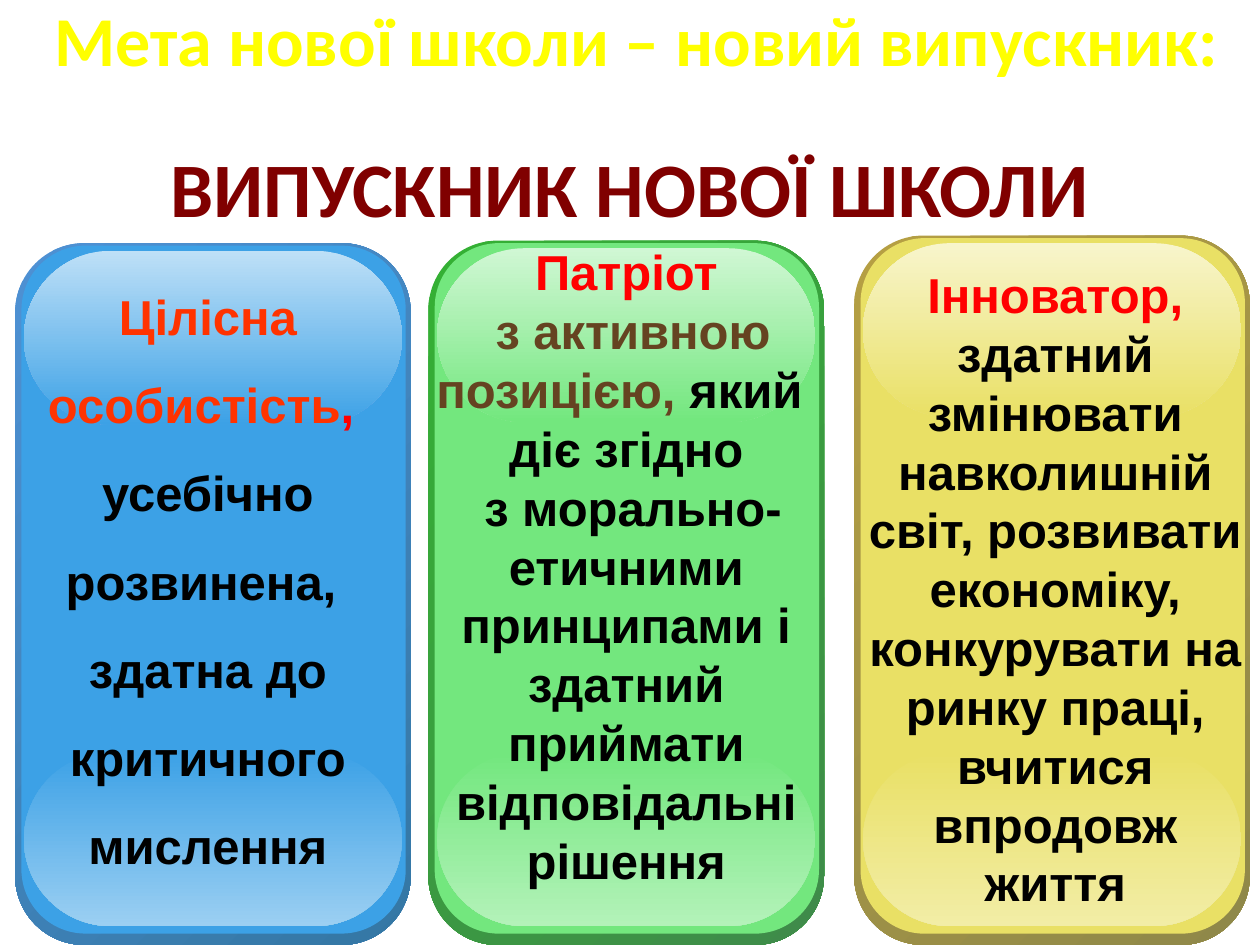
import pptx
import pptx.util
import pptx.dml.color
import pptx.enum.shapes
import pptx.enum.text
import pptx.oxml

Inches = pptx.util.Inches
ROUNDED = pptx.enum.shapes.MSO_SHAPE.ROUNDED_RECTANGLE
CENTER = pptx.enum.text.PP_ALIGN.CENTER

COLORS = {
    "heading": "800000", "headline": "FFFF00", "red": "FF0000",
    "orange": "FF3300", "brown": "654321", "black": "000000",
    "blue": "3CA1E6", "green": "73E77E", "yellow": "E9E065",
}
HEADING = {"size": pptx.util.Pt(44), "name": "Calibri", "bold": True}
HEADLINE = {"size": pptx.util.Pt(40), "name": "Calibri", "bold": True}
TRAIT = {"size": pptx.util.Pt(28), "name": "Arial", "bold": True}

SLIDE_W, SLIDE_H = 10, 7.5
CARD_W = 3.14

# Each card: box left and top, colours, text box, line spacing, paragraphs of (text, colour)
CARDS = [
    {"left": 0.12, "top": 1.93, "face": "blue", "rim": ("4E91D4", "3477A4"),
     "glow": "BEE0F7", "foot": "9BCFF2",
     "text_box": (-0.12, 0.06, 3.3, 5.05), "spacing": 1.5,
     "traits": [
         [("Цілісна особистість", "orange"), (", ", "red")],
         [("усебічно розвинена, ", "black")],
         [("здатна до критичного мислення", "black")]]},
    {"left": 3.4, "top": 1.91, "face": "green", "rim": ("34B034", "3F8B4A"),
     "glow": "D0F7D4", "foot": "B3F2B9",
     "text_box": (-0.17, -0.04, 3.48, 5.28), "spacing": 1.0,
     "traits": [
         [("Патріот", "red")],
         [(" з активною позицією, ", "brown"), ("який ", "black")],
         [("діє згідно", "black")],
         [(" з морально-етичними принципами і здатний приймати "
           "відповідальні рішення", "black")]]},
    {"left": 6.78, "top": 1.87, "face": "yellow", "rim": ("B59F43", "8F8849"),
     "glow": "F8F5CC", "foot": "F2EDA6",
     "text_box": (-0.03, 0.18, 3.25, 5.28), "spacing": 1.0,
     "traits": [
         [("Інноватор, ", "red"),
          ("здатний змінювати навколишній світ, розвивати економіку, "
           "конкурувати на ринку праці, вчитися впродовж життя", "black")]]},
]


def rgb(hex_color):
    return pptx.dml.color.RGBColor.from_string(hex_color)


def add_run(paragraph, text, color, font_format):
    run = paragraph.add_run()
    run.text = text
    run.font.color.rgb = rgb(COLORS[color])
    for attribute, value in font_format.items():
        setattr(run.font, attribute, value)


def add_panel(slide, box, rounding, colors, angle=0):
    """Rounded panel, solid for one colour and graded for two."""
    panel = slide.shapes.add_shape(ROUNDED, *map(Inches, box))
    panel.adjustments[0] = rounding
    panel.shadow.inherit = False
    panel.line.fill.background()
    if len(colors) == 1:
        panel.fill.solid()
        panel.fill.fore_color.rgb = rgb(colors[0])
        return
    panel.fill.gradient()
    panel.fill.gradient_angle = angle
    for stop, position, color in zip(panel.fill.gradient_stops, (0, 1), colors):
        stop.position = position
        stop.color.rgb = rgb(color)


def add_card(slide, card):
    left, top = card["left"], card["top"]
    height = SLIDE_H - top
    face = COLORS[card["face"]]
    gloss_left, gloss_w, gloss_h = left + 0.07, CARD_W - 0.14, 1.38

    # Rim, face, and the glossy ends
    add_panel(slide, (left, top, CARD_W, height), 0.175, card["rim"], 315)
    add_panel(slide, (left + 0.05, top + 0.02, CARD_W - 0.09, height - 0.11),
              0.167, (face,))
    add_panel(slide, (gloss_left, SLIDE_H - 0.15 - gloss_h, gloss_w, gloss_h),
              0.5, (face, card["foot"]), 270)
    add_panel(slide, (gloss_left, top + 0.06, gloss_w, gloss_h),
              0.5, (card["glow"], face), 270)

    # Trait text
    dx, dy, width, text_h = card["text_box"]
    frame = slide.shapes.add_textbox(
        *map(Inches, (left + dx, top + dy, width, text_h))).text_frame
    frame.word_wrap = True
    for index, runs in enumerate(card["traits"]):
        paragraph = frame.add_paragraph() if index else frame.paragraphs[0]
        paragraph.alignment = CENTER
        paragraph.line_spacing = card["spacing"]
        for text, color in runs:
            add_run(paragraph, text, color, TRAIT)


def fill_placeholder(placeholder, box, text, color, font_format):
    for attribute, value in zip(("left", "top", "width", "height"), box):
        setattr(placeholder, attribute, Inches(value))
    paragraph = placeholder.text_frame.paragraphs[0]
    paragraph.alignment = CENTER
    add_run(paragraph, text, color, font_format)
    return paragraph


def add_headings(slide):
    fill_placeholder(slide.shapes.title, (0, 1.05, SLIDE_W, 0.87),
                     "ВИПУСКНИК НОВОЇ ШКОЛИ", "heading", HEADING)
    headline = fill_placeholder(
        slide.placeholders[1], (0.17, 0, 9.76, 1.1),
        "Мета нової школи – новий випускник:", "headline", HEADLINE)
    headline.line_spacing = 0.9
    # The headline carries no bullet
    headline._p.get_or_add_pPr().append(
        pptx.oxml.parse_xml(
            '<a:buNone xmlns:a="http://schemas.openxmlformats.org/drawingml/2006/main"/>'))


def main():
    presentation = pptx.Presentation()
    presentation.slide_width = Inches(SLIDE_W)
    presentation.slide_height = Inches(SLIDE_H)
    slide = presentation.slides.add_slide(presentation.slide_layouts[1])
    add_headings(slide)
    for card in CARDS:
        add_card(slide, card)
    presentation.save("out.pptx")


if __name__ == "__main__":
    main()
